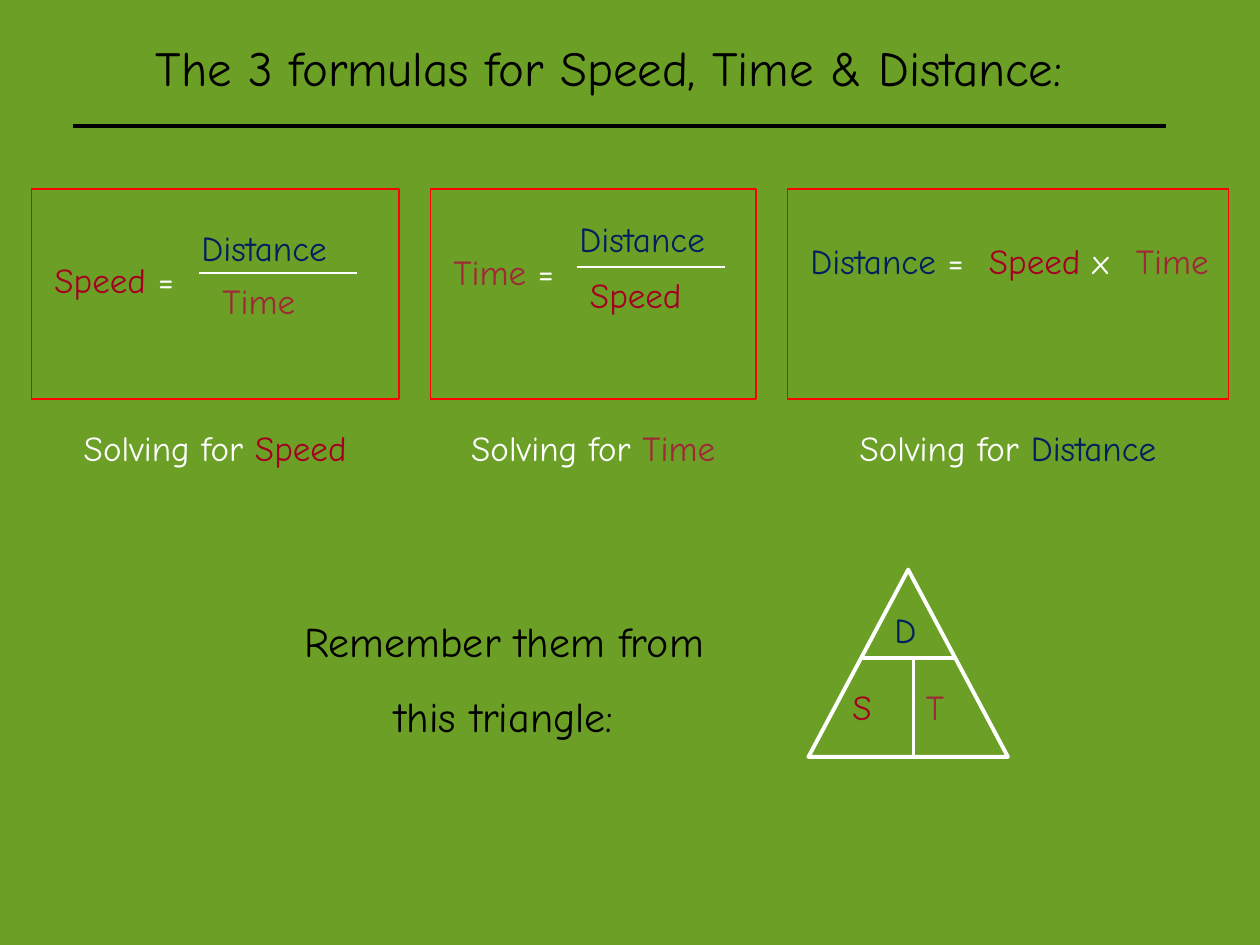
from pptx import Presentation
from pptx.dml.color import RGBColor
from pptx.enum.shapes import MSO_CONNECTOR as Connector, MSO_SHAPE as Shape
from pptx.enum.text import PP_ALIGN as Align
from pptx.oxml.ns import qn
from pptx.util import Pt

GREEN = RGBColor(0x6B, 0x9F, 0x25)
BLACK = RGBColor(0, 0, 0)
WHITE = RGBColor(0xFF, 0xFF, 0xFF)
RED = RGBColor(0xFF, 0, 0)
CRIMSON = RGBColor(0xA5, 0, 0x21)
BRICK = RGBColor(0x9F, 0x29, 0x36)
NAVY = RGBColor(0, 0x20, 0x60)

SPEED = ("Speed", CRIMSON)
TIME = ("Time", BRICK)
DISTANCE = ("Distance", NAVY)
EQUALS = (" =", WHITE)
TIMES = (" x", WHITE)


def add_text(shapes, box, lines, size=20, align=Align.LEFT):
    """Each line is a list of (text, colour) runs."""
    text_frame = shapes.add_textbox(*map(Pt, box)).text_frame
    text_frame.word_wrap = True
    for index, line in enumerate(lines):
        paragraph = text_frame.add_paragraph() if index else text_frame.paragraphs[0]
        paragraph.alignment = align
        if index:
            paragraph.space_before = Pt(14)
        for text, color in line:
            run = paragraph.add_run()
            run.text = text
            run.font.name = "Comic Neue"
            run.font.size = Pt(size)
            run.font.color.rgb = color


def add_line(shapes, start, end, color, width):
    line = shapes.add_connector(Connector.STRAIGHT, *map(Pt, start + end))
    line.line.color.rgb = color
    line.line.width = Pt(width)
    properties = line._element.spPr
    properties.append(properties.makeelement(qn("a:effectLst"), {}))


presentation = Presentation()
presentation.slide_width = Pt(720)
presentation.slide_height = Pt(540)
slide = presentation.slides.add_slide(presentation.slide_layouts[6])
slide.background.fill.solid()
slide.background.fill.fore_color.rgb = GREEN

add_text(slide.shapes, (30, 18, 636, 41),
         [[("The 3 formulas for Speed, Time & Distance:", BLACK)]], 28, Align.CENTER)
add_line(slide.shapes, (42, 72), (666, 72), BLACK, 2)

# Frame left and width, solved quantity, terms (left, top, width, runs),
# and the fraction bar (left, right, height on the slide)
formulas = [
    (18, 210, SPEED,
     [(24, 144, 108, [SPEED, EQUALS]), (108, 126, 102, [DISTANCE]), (120, 156, 114, [TIME])],
     (114, 204, 156)),
    (246, 186, TIME,
     [(252, 139.5, 114, [TIME, EQUALS]), (324, 121, 126, [DISTANCE]), (330, 152.5, 90, [SPEED])],
     (330, 414, 152.5)),
    (450, 252, DISTANCE,
     [(456, 133.5, 126, [DISTANCE, EQUALS]), (558, 133.5, 114, [SPEED, TIMES]),
      (642, 133.5, 78, [TIME])],
     None),
]
for left, width, solved, terms, bar in formulas:
    formula = slide.shapes.add_group_shape().shapes
    for term_left, term_top, term_width, runs in terms:
        add_text(formula, (term_left, term_top, term_width, 31), [runs])
    if bar:
        bar_left, bar_right, bar_y = bar
        add_line(formula, (bar_left, bar_y), (bar_right, bar_y), WHITE, 1.5)
    frame = formula.add_shape(Shape.RECTANGLE, Pt(left), Pt(108), Pt(width), Pt(120))
    frame.shadow.inherit = False
    frame.fill.background()
    frame.line.color.rgb = RED
    frame.line.width = Pt(0.75)
    add_text(slide.shapes, (left, 240, width, 31),
             [[("Solving for ", WHITE), solved]], align=Align.CENTER)

add_text(slide.shapes, (150, 348, 276, 79),
         [[("Remember them from", BLACK)], [("this triangle:", BLACK)]], 24, Align.CENTER)

reminder = slide.shapes.add_group_shape().shapes
triangle = reminder.add_shape(Shape.ISOSCELES_TRIANGLE, Pt(462), Pt(325.5), Pt(114), Pt(107))
triangle.shadow.inherit = False
triangle.fill.background()
triangle.line.color.rgb = WHITE
triangle.line.width = Pt(2.25)
add_line(reminder, (492, 376), (546, 376), WHITE, 2.25)
add_line(reminder, (522, 376), (522, 432.5), WHITE, 2.25)
for left, top, width, (name, color) in [
    (504, 344, 54, DISTANCE),
    (480, 388, 42, SPEED),
    (522, 388, 60, TIME),
]:
    add_text(reminder, (left, top, width, 31), [[(name[0], color)]])

presentation.save("out.pptx")
